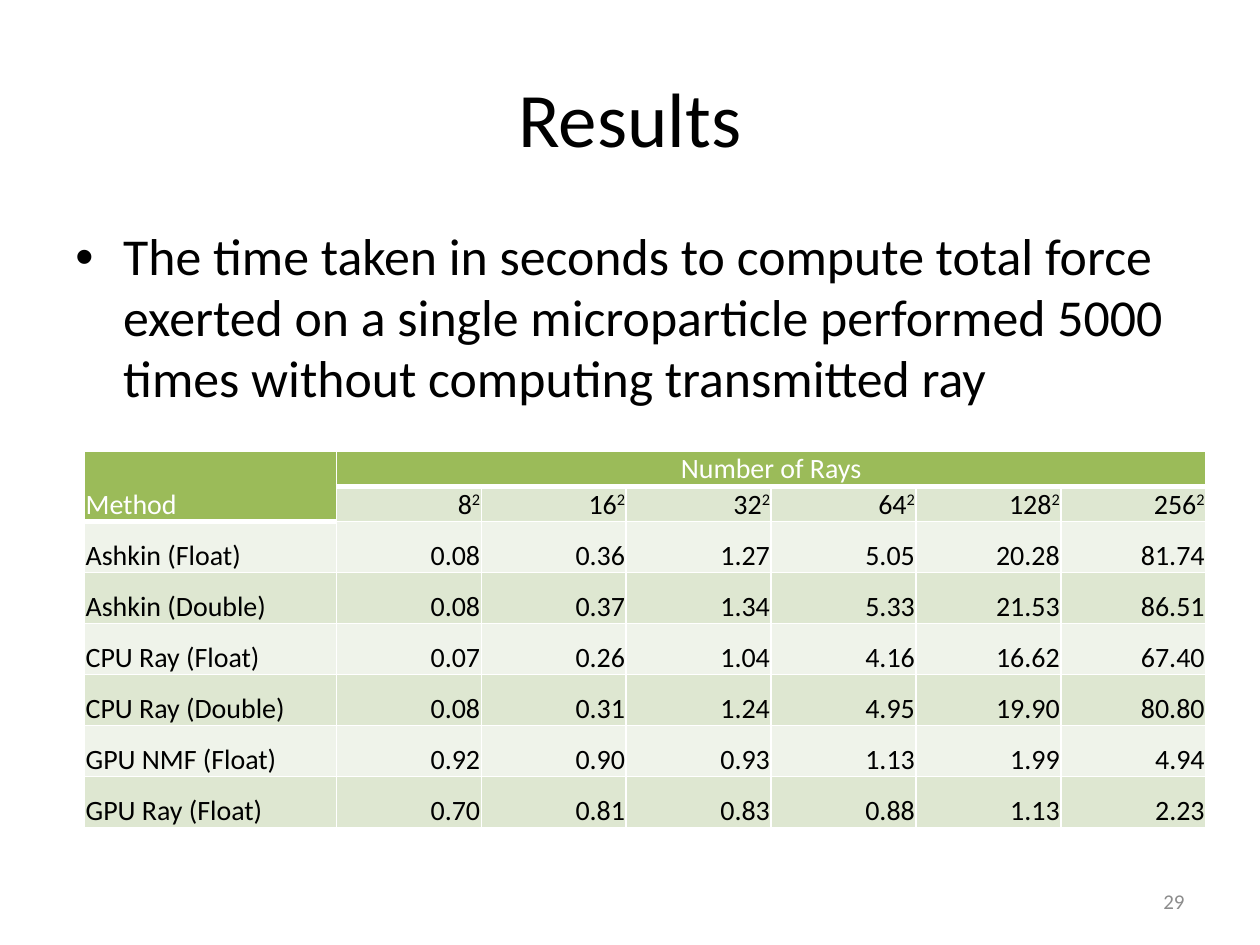
from lxml import etree
from pptx import Presentation
from pptx.dml.color import RGBColor
from pptx.enum.text import MSO_ANCHOR, PP_ALIGN
from pptx.oxml.ns import qn
from pptx.util import Inches, Pt

BLACK = RGBColor(0x00, 0x00, 0x00)
WHITE = RGBColor(0xFF, 0xFF, 0xFF)
GRAY = RGBColor(0x8C, 0x8C, 0x8C)
GREEN = RGBColor(0x9B, 0xBB, 0x59)
BAND_DARK = RGBColor(0xDE, 0xE7, 0xD1)
BAND_LIGHT = RGBColor(0xEF, 0xF3, 0xEA)

RAY_BASES = ["8", "16", "32", "64", "128", "256"]
TIMINGS = [
    ["Ashkin (Float)", "0.08", "0.36", "1.27", "5.05", "20.28", "81.74"],
    ["Ashkin (Double)", "0.08", "0.37", "1.34", "5.33", "21.53", "86.51"],
    ["CPU Ray (Float)", "0.07", "0.26", "1.04", "4.16", "16.62", "67.40"],
    ["CPU Ray (Double)", "0.08", "0.31", "1.24", "4.95", "19.90", "80.80"],
    ["GPU NMF (Float)", "0.92", "0.90", "0.93", "1.13", "1.99", "4.94"],
    ["GPU Ray (Float)", "0.70", "0.81", "0.83", "0.88", "1.13", "2.23"],
]


def write_text(paragraph, text, size, color, alignment=PP_ALIGN.LEFT):
    paragraph.alignment = alignment
    run = paragraph.add_run()
    run.text = text
    for name, value in {"name": "Calibri", "size": Pt(size), "bold": False}.items():
        setattr(run.font, name, value)
    run.font.color.rgb = color
    return run


def add_borders(cell, bottom_width):
    properties = cell._tc.get_or_add_tcPr()
    for side, width in {"L": 1, "R": 1, "T": 1, "B": bottom_width}.items():
        line = etree.SubElement(properties, qn(f"a:ln{side}"), w=str(Pt(width)))
        fill = etree.SubElement(line, qn("a:solidFill"))
        etree.SubElement(fill, qn("a:srgbClr"), val=str(WHITE))


presentation = Presentation()
presentation.slide_width = Inches(10)
presentation.slide_height = Inches(7.5)
slide = presentation.slides.add_slide(presentation.slide_layouts[5])

# Title
title = slide.shapes.title
title_format = {"left": Inches(0.5), "top": Inches(0.3),
                "width": Inches(9), "height": Inches(1.25)}
for name, value in title_format.items():
    setattr(title, name, value)
title.text_frame.vertical_anchor = MSO_ANCHOR.MIDDLE
write_text(title.text_frame.paragraphs[0], "Results", 44, BLACK, PP_ALIGN.CENTER)

# Bulleted statement
body = slide.shapes.add_textbox(Inches(0.5), Inches(1.75), Inches(9), Inches(1.92))
body.text_frame.word_wrap = True
paragraph = body.text_frame.paragraphs[0]
bullet_properties = paragraph._p.get_or_add_pPr()
bullet_properties.set("marL", str(Inches(0.38)))
bullet_properties.set("indent", str(Inches(-0.38)))
etree.SubElement(bullet_properties, qn("a:buFont"), typeface="Arial")
etree.SubElement(bullet_properties, qn("a:buChar"), char="•")
paragraph.line_spacing = 0.98
write_text(paragraph, "The time taken in seconds to compute total force exerted on a single "
           "microparticle performed 5000 times without computing transmitted ray", 29.6, BLACK)

# Slide number
number = slide.shapes.add_textbox(Inches(7.17), Inches(6.95), Inches(2.33), Inches(0.4))
number.text_frame.word_wrap = True
number.text_frame.vertical_anchor = MSO_ANCHOR.MIDDLE
write_text(number.text_frame.paragraphs[0], "29", 12, GRAY, PP_ALIGN.RIGHT)

# Timing table
rows = [["Method", "Number of Rays"] + [""] * 5, [""] + RAY_BASES] + TIMINGS
table = slide.shapes.add_table(len(rows), len(rows[0]), Inches(0.67), Inches(3.58),
                               Inches(8.92), Inches(2.99)).table
for index, column in enumerate(table.columns):
    column.width = Inches(2 if index == 0 else 1.15)
for index, row in enumerate(table.rows):
    row.height = Inches(0.28) if index < 2 else Inches((2.99 - 2 * 0.28) / len(TIMINGS))
table.cell(0, 0).merge(table.cell(1, 0))
table.cell(0, 1).merge(table.cell(0, 6))

cell_format = {"vertical_anchor": MSO_ANCHOR.BOTTOM, "margin_left": Inches(0.01),
               "margin_right": Inches(0.01), "margin_top": Inches(0.01), "margin_bottom": 0}
for row_index, row in enumerate(rows):
    for column_index, text in enumerate(row):
        cell = table.cell(row_index, column_index)
        is_header = row_index == 0 or (row_index == 1 and column_index == 0)
        for name, value in cell_format.items():
            setattr(cell, name, value)
        add_borders(cell, 3 if is_header else 1)
        cell.fill.solid()
        band = BAND_DARK if row_index % 2 else BAND_LIGHT
        cell.fill.fore_color.rgb = GREEN if is_header else band
        if not text:
            continue
        if column_index == 0:
            alignment = PP_ALIGN.LEFT
        else:
            alignment = PP_ALIGN.CENTER if is_header else PP_ALIGN.RIGHT
        color = WHITE if is_header else BLACK
        paragraph = cell.text_frame.paragraphs[0]
        write_text(paragraph, text, 16, color, alignment)
        if row_index == 1:
            exponent = write_text(paragraph, "2", 16, color, alignment)
            exponent._r.get_or_add_rPr().set("baseline", "30000")

presentation.save("out.pptx")
